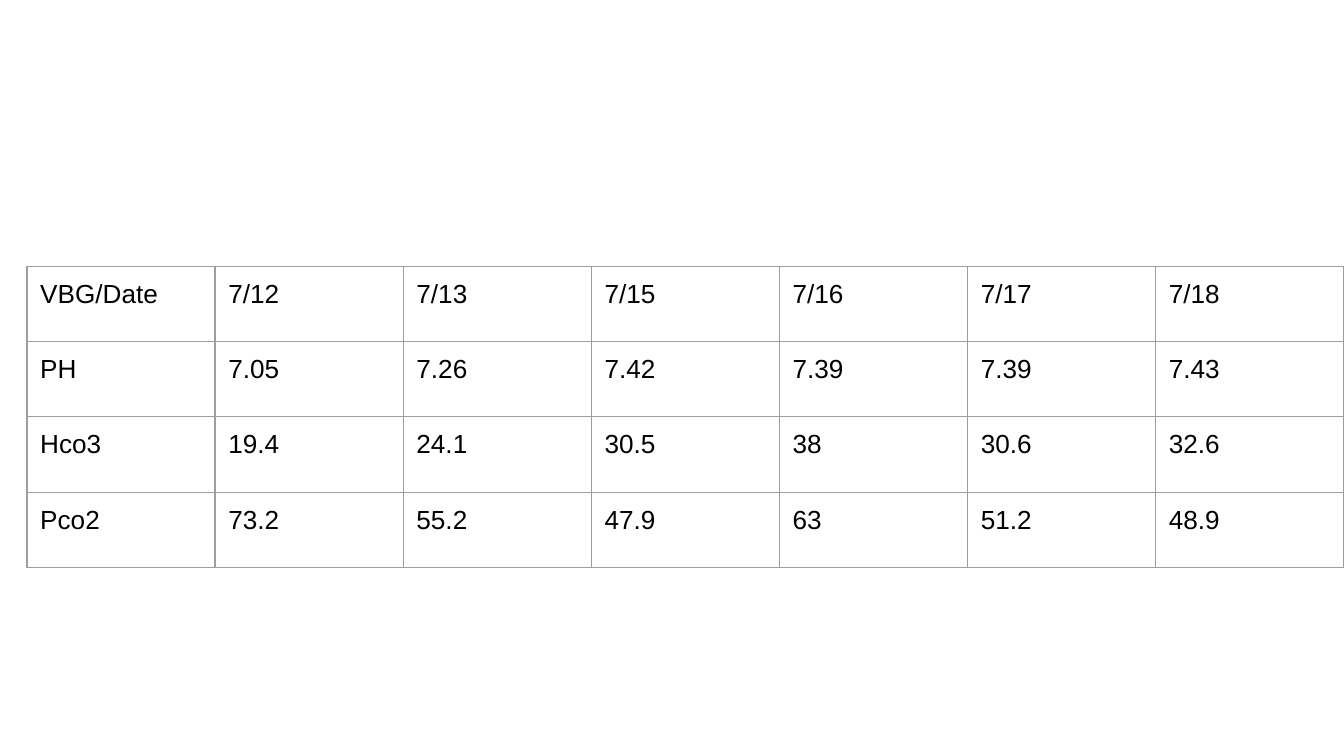
import pptx
import pptx.dml.color
import pptx.oxml
import pptx.oxml.ns
import pptx.util

Cm = pptx.util.Cm
BLACK = pptx.dml.color.RGBColor(0x00, 0x00, 0x00)
GRID_GREY = pptx.dml.color.RGBColor(0x9E, 0x9E, 0x9E)

BLOOD_GAS_ROWS = [
    ["VBG/Date", "7/12", "7/13", "7/15", "7/16", "7/17", "7/18"],
    ["PH", "7.05", "7.26", "7.42", "7.39", "7.39", "7.43"],
    ["Hco3", "19.4", "24.1", "30.5", "38", "30.6", "32.6"],
    ["Pco2", "73.2", "55.2", "47.9", "63", "51.2", "48.9"],
]
CELL_FORMAT = {f"margin_{side}": Cm(0.25) for side in ("left", "top", "right", "bottom")}
FONT_FORMAT = {"name": "Arial", "size": pptx.util.Pt(14), "bold": False}
PLAIN_TABLE = {"first_row": False, "horz_banding": False}


def apply_format(target, values):
    """Set each attribute in values on the target."""
    for attribute, value in values.items():
        setattr(target, attribute, value)


def outline_cell(cell, color, weight):
    """Draw the same solid border on all four sides of a cell."""
    properties = cell._tc.get_or_add_tcPr()
    for position, side in enumerate(("lnL", "lnR", "lnT", "lnB")):
        border = pptx.oxml.parse_xml(
            f'<a:{side} {pptx.oxml.ns.nsdecls("a")} w="{weight}">'
            f'<a:solidFill><a:srgbClr val="{color}"/></a:solidFill></a:{side}>'
        )
        properties.insert(position, border)


def fill_cell(cell, reading):
    """Write one reading into a clear, outlined cell."""
    apply_format(cell, CELL_FORMAT)
    cell.fill.background()
    outline_cell(cell, GRID_GREY, pptx.util.Pt(0.75))
    run = cell.text_frame.paragraphs[0].add_run()
    run.text = reading
    apply_format(run.font, FONT_FORMAT)
    run.font.color.rgb = BLACK


def add_blood_gas_table(slide, left, top, width, height):
    """Place the blood gas readings in an even grid within the box."""
    row_count, column_count = len(BLOOD_GAS_ROWS), len(BLOOD_GAS_ROWS[0])
    readings = slide.shapes.add_table(row_count, column_count, left, top, width, height).table
    apply_format(readings, PLAIN_TABLE)
    for row, row_values in enumerate(BLOOD_GAS_ROWS):
        for column, reading in enumerate(row_values):
            fill_cell(readings.cell(row, column), reading)


def main():
    """Build the slide and save it."""
    deck = pptx.Presentation()
    apply_format(deck, {"slide_width": Cm(25.4), "slide_height": Cm(14.29)})
    slide = deck.slides.add_slide(deck.slide_layouts[6])
    add_blood_gas_table(slide, Cm(0.51), Cm(5.03), Cm(24.89), Cm(5.7))
    deck.save("out.pptx")


if __name__ == "__main__":
    main()
